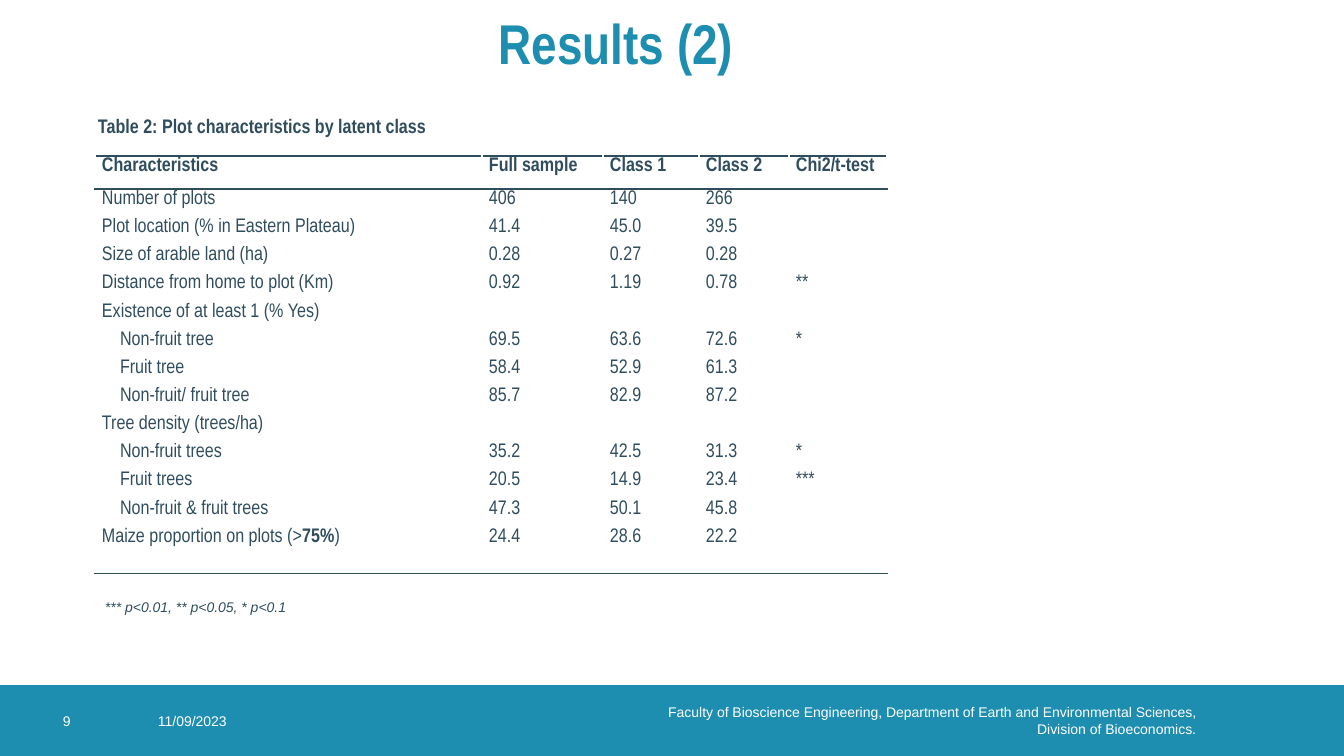
from dataclasses import dataclass

from lxml.etree import SubElement
from pptx import Presentation
from pptx.dml.color import RGBColor
from pptx.enum.shapes import MSO_SHAPE as Shape
from pptx.enum.text import MSO_ANCHOR as Anchor, MSO_AUTO_SIZE as AutoSize, PP_ALIGN as Align
from pptx.oxml.ns import qn
from pptx.util import Pt

PX = 914400 / 100.8  # EMU in one px


@dataclass(frozen=True)
class Theme:
    blue: str = "1D8DB0"
    slate: str = "2F4D5D"
    white: str = "FFFFFF"
    narrow: str = "Arial Narrow"
    plain: str = "Arial"
    title: int = 40
    body: int = 14
    small: int = 10


theme = Theme()


def add_run(para, text, font, size, color, bold=False, italic=False):
    span = para.add_run()
    span.text = text
    span.font.name, span.font.size = font, Pt(size)
    span.font.bold, span.font.italic = bold, italic
    span.font.color.rgb = RGBColor.from_string(color)


def add_text(page, area, insets, anchor, align=Align.LEFT):
    box = page.shapes.add_textbox(*[round(n * PX) for n in area])
    frame = box.text_frame
    frame.word_wrap = True
    frame.vertical_anchor = anchor
    left, top, right, bottom = [round(n * PX) for n in insets]
    frame.margin_left, frame.margin_top = left, top
    frame.margin_right, frame.margin_bottom = right, bottom
    para = frame.paragraphs[0]
    para.alignment = align
    return frame, para


deck = Presentation()
deck.slide_width, deck.slide_height = round(1344 * PX), round(756 * PX)
page = deck.slides.add_slide(deck.slide_layouts[6])

# Footer band
band = page.shapes.add_shape(Shape.RECTANGLE, 0, round(685 * PX), deck.slide_width, round(71 * PX))
band.shadow.inherit = False
band.fill.solid()
band.fill.fore_color.rgb = RGBColor.from_string(theme.blue)
band.line.fill.background()

# Footer texts: left, width, right inset, alignment, wording
FOOTER = [
    (158, 80, 0, Align.LEFT, "11/09/2023"),
    (665, 551, 20, Align.RIGHT,
     "Faculty of Bioscience Engineering, Department of Earth and Environmental Sciences, "
     "Division of Bioeconomics."),
    (63, 72, 0, Align.LEFT, "9"),
]
for left, width, inset, align, text in FOOTER:
    frame, para = add_text(page, (left, 685, width, 71), (0, 0, inset, 0), Anchor.MIDDLE, align)
    add_run(para, text, theme.plain, theme.small, theme.white)

# Title and table caption
frame, para = add_text(page, (371, 0, 516, 84), (0, 0, 26, 0), Anchor.MIDDLE, Align.CENTER)
add_run(para, "Results (2)", theme.narrow, theme.title, theme.blue, bold=True)

frame, para = add_text(page, (88, 112, 586, 45), (10, 5, 10, 5), Anchor.TOP)
para.line_spacing = 0.9
add_run(para, "Table 2: Plot characteristics by latent class",
        theme.narrow, theme.body, theme.slate, bold=True)

# Table: indent level, label, then one value per column
ROWS = [
    (0, "Characteristics", "Full sample", "Class 1", "Class 2", "Chi2/t-test"),
    (0, "Number of plots", "406", "140", "266", ""),
    (0, "Plot location (% in Eastern Plateau)", "41.4", "45.0", "39.5", ""),
    (0, "Size of arable land (ha)", "0.28", "0.27", "0.28", ""),
    (0, "Distance from home to plot (Km)", "0.92", "1.19", "0.78", "**"),
    (0, "Existence of at least 1 (% Yes)", "", "", "", ""),
    (1, "Non-fruit tree", "69.5", "63.6", "72.6", "*"),
    (1, "Fruit tree", "58.4", "52.9", "61.3", ""),
    (1, "Non-fruit/ fruit tree", "85.7", "82.9", "87.2", ""),
    (0, "Tree density (trees/ha)", "", "", "", ""),
    (1, "Non-fruit trees", "35.2", "42.5", "31.3", "*"),
    (1, "Fruit trees", "20.5", "14.9", "23.4", "***"),
    (1, "Non-fruit & fruit trees", "47.3", "50.1", "45.8", ""),
    (0, "Maize proportion on plots (>|75%|)", "24.4", "28.6", "22.2", ""),  # bold between bars
]
COLUMNS = [387, 121, 96, 90, 98]
INDENT = 18
last = len(ROWS) - 1
heights = [33] + [338 / 12] * 12 + [47]

table = page.shapes.add_table(
    len(ROWS), len(COLUMNS), round(95 * PX), round(156 * PX),
    round(sum(COLUMNS) * PX), round(sum(heights) * PX)).table
table.first_row = table.horz_banding = False
for column, width in zip(table.columns, COLUMNS):
    column.width = round(width * PX)

for r, (level, *texts) in enumerate(ROWS):
    table.rows[r].height = round(heights[r] * PX)
    top = theme.slate if r in (0, 1) else theme.white
    bottom = theme.slate if r in (0, last) else theme.white
    for c, text in enumerate(texts):
        cell = table.cell(r, c)
        cell.margin_left = cell.margin_right = round(7 * PX)
        cell.margin_top = cell.margin_bottom = 0
        # Borders come before the fill
        props = cell._tc.get_or_add_tcPr()
        for side, color in zip("LRTB", (theme.white, theme.white, top, bottom)):
            line = SubElement(props, qn(f"a:ln{side}"), w=str(Pt(1)))
            SubElement(SubElement(line, qn("a:solidFill")), qn("a:srgbClr"), val=color)
        cell.fill.background()
        para = cell.text_frame.paragraphs[0]
        para.line_spacing, para.space_after = 1.07, Pt(8)
        if level and c == 0:
            para._p.get_or_add_pPr().set("marL", str(round(INDENT * PX)))
        if text:
            for part, piece in enumerate(text.split("|")):
                add_run(para, piece, theme.narrow, theme.body, theme.slate,
                        bold=r == 0 or part == 1)
        else:
            # Keeps empty cells as low as filled ones
            SubElement(para._p, qn("a:endParaRPr"), sz=str(theme.body * 100))

# Significance note
frame, para = add_text(page, (95, 592, 978, 27), (10, 5, 10, 5), Anchor.TOP)
frame.auto_size = AutoSize.SHAPE_TO_FIT_TEXT
para.line_spacing, para.space_after = 1.07, Pt(8)
add_run(para, "*** p<0.01, ** p<0.05, * p<0.1", theme.plain, theme.small, theme.slate, italic=True)

deck.save("out.pptx")
